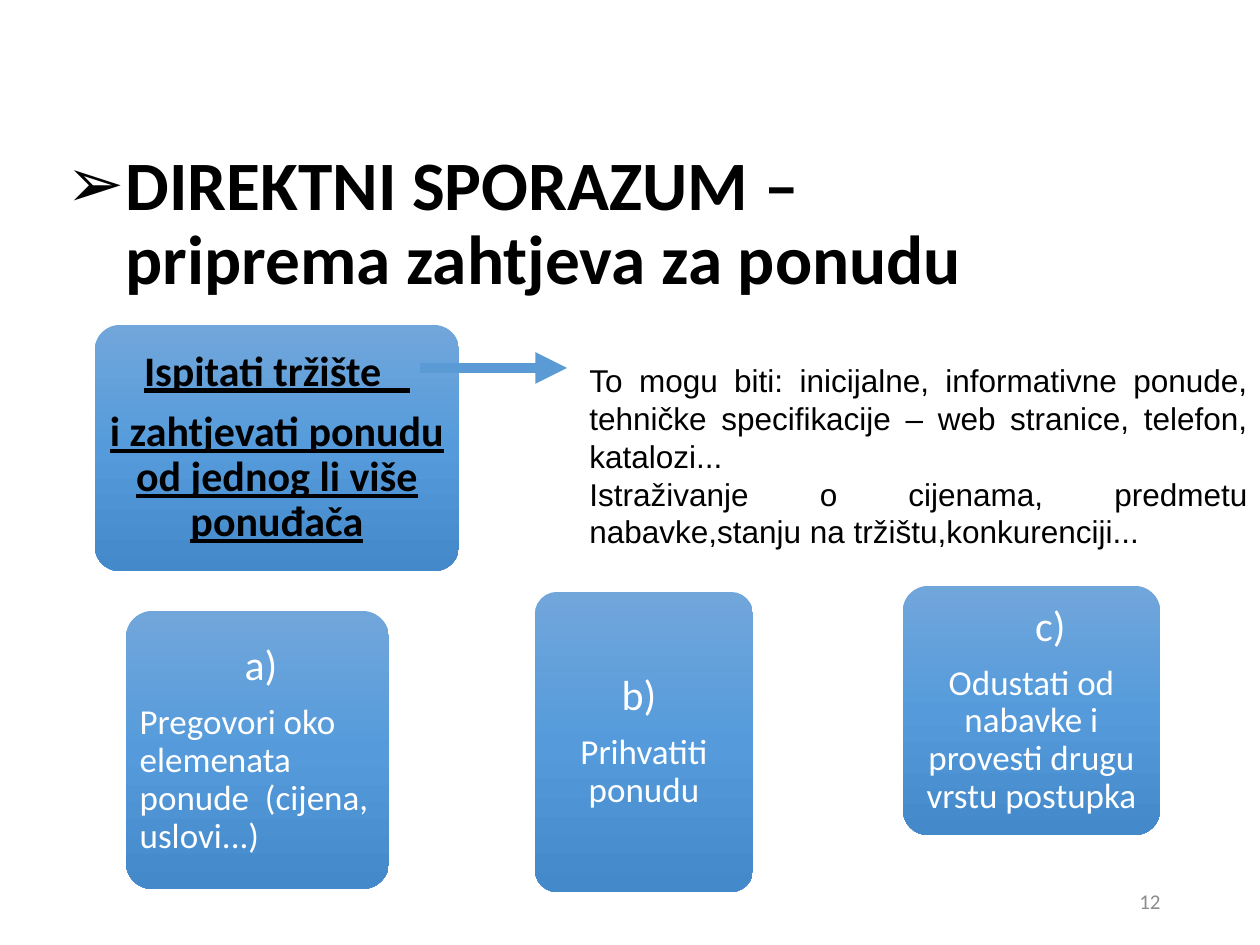
from lxml import etree
from pptx import Presentation
from pptx.dml.color import RGBColor
from pptx.enum.shapes import MSO_CONNECTOR, MSO_SHAPE
from pptx.enum.text import MSO_ANCHOR, MSO_AUTO_SIZE, PP_ALIGN
from pptx.oxml.ns import qn
from pptx.util import Emu, Pt

LEFT, CENTER, RIGHT = PP_ALIGN.LEFT, PP_ALIGN.CENTER, PP_ALIGN.RIGHT
JUSTIFY = PP_ALIGN.JUSTIFY
TOP, MIDDLE = MSO_ANCHOR.TOP, MSO_ANCHOR.MIDDLE
PX_PER_INCH = 126
TITLE_ONLY = 5
COLORS = {
    "black": "000000", "white": "FFFFFF", "gray": "8C8C8C", "arrow": "5B9BD5",
    "card_top": "71A6DB", "card_middle": "559BDB", "card_bottom": "448ACA",
}


def px(length):
    return Emu(round(length * 914400 / PX_PER_INCH))


def color(name):
    return RGBColor.from_string(COLORS[name])


def write(paragraph, text, size=18, font="Calibri", ink="black", bold=False,
          underline=False, align=LEFT, line=1.0, after=0, left=0, right=0,
          first=0, bullet=None):
    properties = paragraph._p.get_or_add_pPr()
    for name, value in (("marL", left), ("marR", right), ("indent", first)):
        properties.set(name, str(px(value)))
    if bullet:
        etree.SubElement(properties, qn("a:buFont")).set("typeface", "Arial")
        etree.SubElement(properties, qn("a:buChar")).set("char", bullet)
    paragraph.alignment = align
    paragraph.line_spacing = line
    paragraph.space_before = Pt(0)
    paragraph.space_after = Pt(after)
    run = paragraph.add_run()
    run.text = text
    run.font.name, run.font.size = font, Pt(size)
    run.font.bold, run.font.underline = bold, underline
    run.font.color.rgb = color(ink)


class SlideBuilder:
    def __init__(self, presentation):
        layout = presentation.slide_layouts[TITLE_ONLY]
        self.slide = presentation.slides.add_slide(layout)
        self.gradient = ((0, "card_top"), (50, "card_middle"), (100, "card_bottom"))

    def fill_text(self, shape, paragraphs, anchor, **style):
        frame = shape.text_frame
        frame.word_wrap = True
        frame.auto_size = MSO_AUTO_SIZE.NONE
        frame.vertical_anchor = anchor
        for index, (text, extra) in enumerate(paragraphs):
            paragraph = frame.add_paragraph() if index else frame.paragraphs[0]
            write(paragraph, text, **{**style, **extra})

    def title(self, text, x, y, width, height, **style):
        shape = self.slide.shapes.title
        shape.left, shape.top = px(x), px(y)
        shape.width, shape.height = px(width), px(height)
        self.fill_text(shape, [(text, {})], MIDDLE, **style)

    def text(self, paragraphs, x, y, width, height, anchor=TOP, **style):
        shape = self.slide.shapes.add_textbox(px(x), px(y), px(width), px(height))
        self.fill_text(shape, paragraphs, anchor, **style)

    def card(self, paragraphs, x, y, width, height, **style):
        shape = self.slide.shapes.add_shape(
            MSO_SHAPE.ROUNDED_RECTANGLE, px(x), px(y), px(width), px(height))
        shape.adjustments[0] = 0.1
        shape.shadow.inherit = False
        shape.line.fill.background()
        shape.fill.gradient()
        shape.fill.gradient_angle = 270
        stops = shape.element.spPr.find(".//" + qn("a:gsLst"))
        for stop in list(stops):
            stops.remove(stop)
        for position, name in self.gradient:
            stop = etree.SubElement(stops, qn("a:gs"), pos=str(position * 1000))
            etree.SubElement(stop, qn("a:srgbClr"), val=COLORS[name])
        frame = shape.text_frame
        frame.margin_left = frame.margin_right = px(6)
        frame.margin_top = frame.margin_bottom = px(4)
        self.fill_text(shape, paragraphs, MIDDLE, line=0.9, **style)

    def arrow(self, x1, y1, x2, y2, width):
        connector = self.slide.shapes.add_connector(
            MSO_CONNECTOR.STRAIGHT, px(x1), px(y1), px(x2), px(y2))
        connector.line.color.rgb = color("arrow")
        connector.line.width = Pt(width)
        line = connector.line._get_or_add_ln()
        etree.SubElement(line, qn("a:tailEnd"), type="triangle")
        etree.SubElement(connector.element.spPr, qn("a:effectLst"))


def main():
    presentation = Presentation()
    presentation.slide_width, presentation.slide_height = px(1260), px(945)
    builder = SlideBuilder(presentation)

    # Title
    builder.title("DIREKTNI SPORAZUM – priprema zahtjeva za ponudu", 54, 192, 921, 66,
                  size=39.6, bold=True, line=0.9, left=59, first=-59, bullet="➢")

    # Option cards: letter above its description
    options = [
        ((126, 611, 263, 278), "a)", {"first": 105},
         "Pregovori oko elemenata ponude  (cijena, uslovi...)", LEFT),
        ((535, 592, 218, 300), "b)", {"right": 10}, "Prihvatiti ponudu", CENTER),
        ((903, 586, 257, 249), "c)", {"left": 38},
         "Odustati od nabavke i provesti drugu vrstu postupka", CENTER),
    ]
    for box, letter, offset, description, align in options:
        builder.card([(letter, {"size": 24, "after": 8.4, **offset}),
                      (description, {"size": 20, "after": 7})],
                     *box, ink="white", align=align)

    # Market research card; its underline runs on past the first line
    builder.card([("Ispitati tržište   ", {}),
                  ("i zahtjevati ponudu od jednog li više ponuđača", {})],
                 95, 325, 364, 246, size=24, bold=True, underline=True,
                 align=CENTER, after=8.4)

    # Slide number
    builder.text([("12", {})], 890, 876, 283, 50, anchor=MIDDLE,
                 size=12, ink="gray", align=RIGHT)

    # Explanation and the arrow that leads to it
    builder.text([
        ("To mogu biti: inicijalne, informativne ponude, tehničke specifikacije – "
         "web stranice, telefon, katalozi...", {}),
        ("Istraživanje o cijenama, predmetu nabavke,stanju na tržištu,konkurenciji...", {}),
    ], 577, 355, 683, 204, font="Arial", align=JUSTIFY)
    builder.arrow(420, 368, 567, 368, 6)

    presentation.save("out.pptx")


if __name__ == "__main__":
    main()
